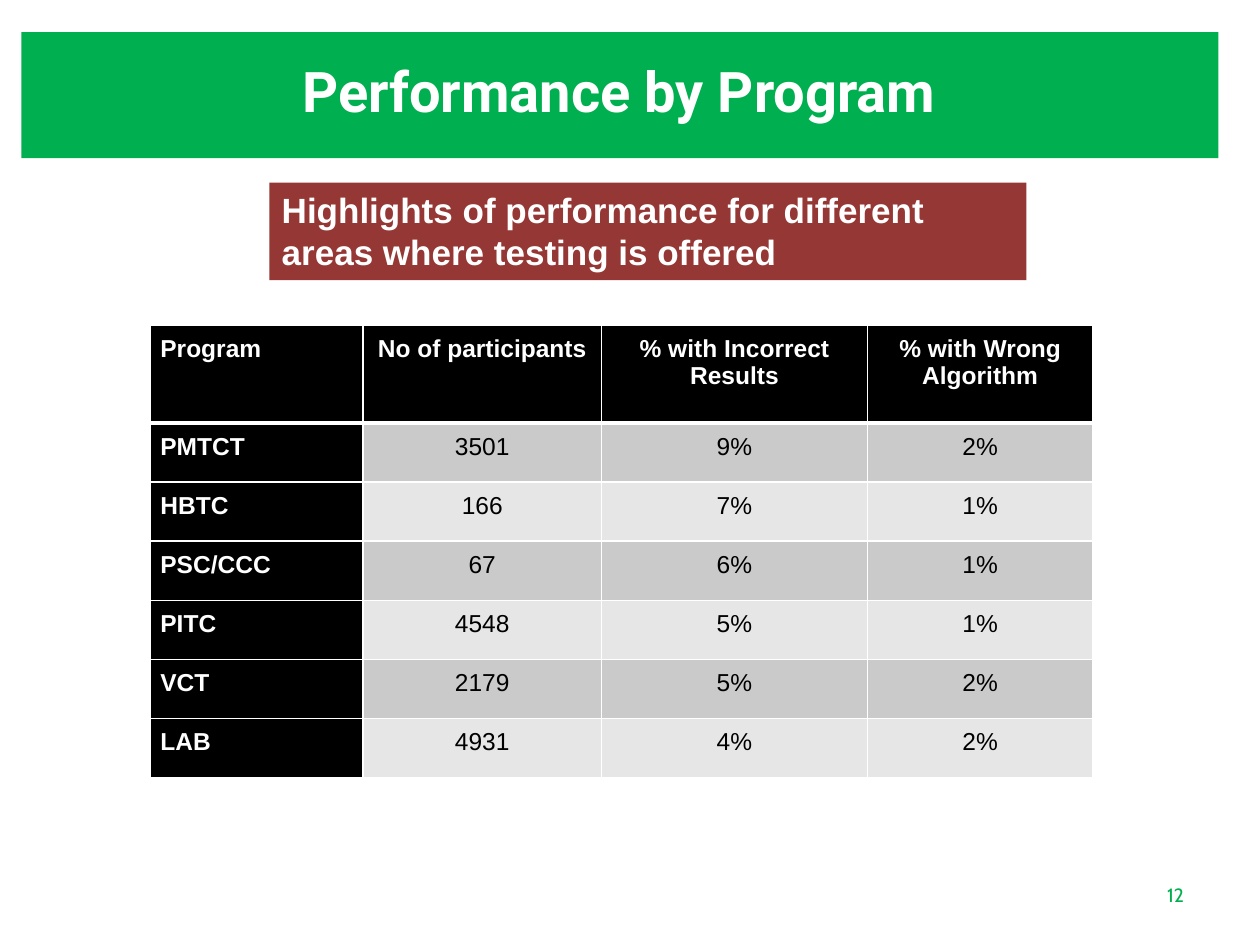
"""Build the slide on testing performance by program."""
from dataclasses import dataclass
from typing import Optional

from lxml import etree
from pptx import Presentation
from pptx.dml.color import RGBColor
from pptx.enum.shapes import MSO_SHAPE
from pptx.enum.text import MSO_ANCHOR, PP_ALIGN
from pptx.oxml.ns import qn
from pptx.slide import Slide
from pptx.table import _Cell
from pptx.text.text import _Paragraph
from pptx.util import Pt

RECTANGLE = MSO_SHAPE.RECTANGLE
TOP, MIDDLE = MSO_ANCHOR.TOP, MSO_ANCHOR.MIDDLE
LEFT, CENTER = PP_ALIGN.LEFT, PP_ALIGN.CENTER

WHITE, BLACK, GREEN, RED = "FFFFFF", "000000", "00B050", "953734"
BANDS = ("CACACA", "E6E6E6")

TABLE_LEFT, TABLE_TOP = 85.9, 185.7
COLUMN_WIDTHS = (121.5, 136.4, 151.9, 129)
HEADER_HEIGHT, ROW_HEIGHT = 56, 33.8
CELL_MARGIN = 5.76
HEADER_RULE, GRID_RULE = 3, 1
ROWS = (
    ("Program", "No of participants", "% with Incorrect Results", "% with Wrong Algorithm"),
    ("PMTCT", "3501", "9%", "2%"),
    ("HBTC", "166", "7%", "1%"),
    ("PSC/CCC", "67", "6%", "1%"),
    ("PITC", "4548", "5%", "1%"),
    ("VCT", "2179", "5%", "2%"),
    ("LAB", "4931", "4%", "2%"),
)


@dataclass(frozen=True)
class TextStyle:
    """Look of a paragraph."""

    font: str
    size: float
    color: str
    bold: bool = False
    align: PP_ALIGN = CENTER


@dataclass(frozen=True)
class Panel:
    """A rectangle or text box, with lengths in points."""

    left: float
    top: float
    width: float
    height: float
    fill: Optional[str] = None
    text: str = ""
    style: Optional[TextStyle] = None
    anchor: MSO_ANCHOR = MIDDLE


PANELS = (
    Panel(12.24, 18.4, 684, 72, fill=GREEN),
    Panel(23.76, 10.08, 660.24, 82.8, text="Performance by Program",
          style=TextStyle("Roboto", 32, WHITE, True)),
    Panel(648.72, 500.4, 46.08, 21.6, text="12", style=TextStyle("Cabin", 11, GREEN)),
    Panel(153.9, 104.4, 432.6, 55.7, fill=RED,
          text="Highlights of performance for different areas where testing is offered",
          style=TextStyle("Arial", 20, WHITE, True, LEFT), anchor=TOP),
)


def rgb(color: str) -> RGBColor:
    """Turn a hex string into a colour."""
    return RGBColor.from_string(color)


def write(para: _Paragraph, text: str, style: TextStyle) -> None:
    """Put styled text in a paragraph."""
    para.text = text
    para.alignment = style.align
    para.font.name = style.font
    para.font.size = Pt(style.size)
    para.font.bold = style.bold
    para.font.color.rgb = rgb(style.color)


def draw_panel(page: Slide, panel: Panel) -> None:
    """Draw a filled rectangle, or a text box when there is no fill."""
    frame = [Pt(length) for length in (panel.left, panel.top, panel.width, panel.height)]
    if panel.fill:
        box = page.shapes.add_shape(RECTANGLE, *frame)
        box.shadow.inherit = False
        box.fill.solid()
        box.fill.fore_color.rgb = rgb(panel.fill)
        box.line.fill.background()
    else:
        box = page.shapes.add_textbox(*frame)
    if panel.style:
        box.text_frame.word_wrap = True
        box.text_frame.vertical_anchor = panel.anchor
        write(box.text_frame.paragraphs[0], panel.text, panel.style)


def add_border(cell: _Cell, side: str, width: float) -> None:
    """Add a white line to one side of a cell."""
    properties = cell._tc.get_or_add_tcPr()
    line = etree.SubElement(properties, qn(f"a:ln{side}"), w=str(Pt(width)))
    fill = etree.SubElement(line, qn("a:solidFill"))
    etree.SubElement(fill, qn("a:srgbClr"), val=WHITE)


def draw_cell(cell: _Cell, text: str, row: int, column: int) -> None:
    """Style and fill one table cell."""
    heading = row == 0 or column == 0
    cell.margin_left = cell.margin_right = Pt(CELL_MARGIN)
    cell.margin_top = cell.margin_bottom = Pt(CELL_MARGIN)
    for side in "LRTB":
        at_header_rule = (row, side) in ((0, "B"), (1, "T"))
        add_border(cell, side, HEADER_RULE if at_header_rule else GRID_RULE)
    cell.fill.solid()
    cell.fill.fore_color.rgb = rgb(BLACK if heading else BANDS[(row - 1) % 2])
    style = TextStyle("Arial", 14, WHITE if heading else BLACK, heading,
                      CENTER if column else LEFT)
    write(cell.text_frame.paragraphs[0], text, style)


def draw_table(page: Slide) -> None:
    """Draw the results by program."""
    height = HEADER_HEIGHT + ROW_HEIGHT * (len(ROWS) - 1)
    table = page.shapes.add_table(
        len(ROWS), len(COLUMN_WIDTHS), Pt(TABLE_LEFT), Pt(TABLE_TOP),
        Pt(sum(COLUMN_WIDTHS)), Pt(height)).table
    for column, width in zip(table.columns, COLUMN_WIDTHS):
        column.width = Pt(width)
    for row, texts in enumerate(ROWS):
        table.rows[row].height = Pt(ROW_HEIGHT if row else HEADER_HEIGHT)
        for column, text in enumerate(texts):
            draw_cell(table.cell(row, column), text, row, column)


def main() -> None:
    """Build and save the deck."""
    deck = Presentation()
    deck.slide_width, deck.slide_height = Pt(720), Pt(540)
    page = deck.slides.add_slide(deck.slide_layouts[6])
    for panel in PANELS:
        draw_panel(page, panel)
    draw_table(page)
    deck.save("out.pptx")


if __name__ == "__main__":
    main()
